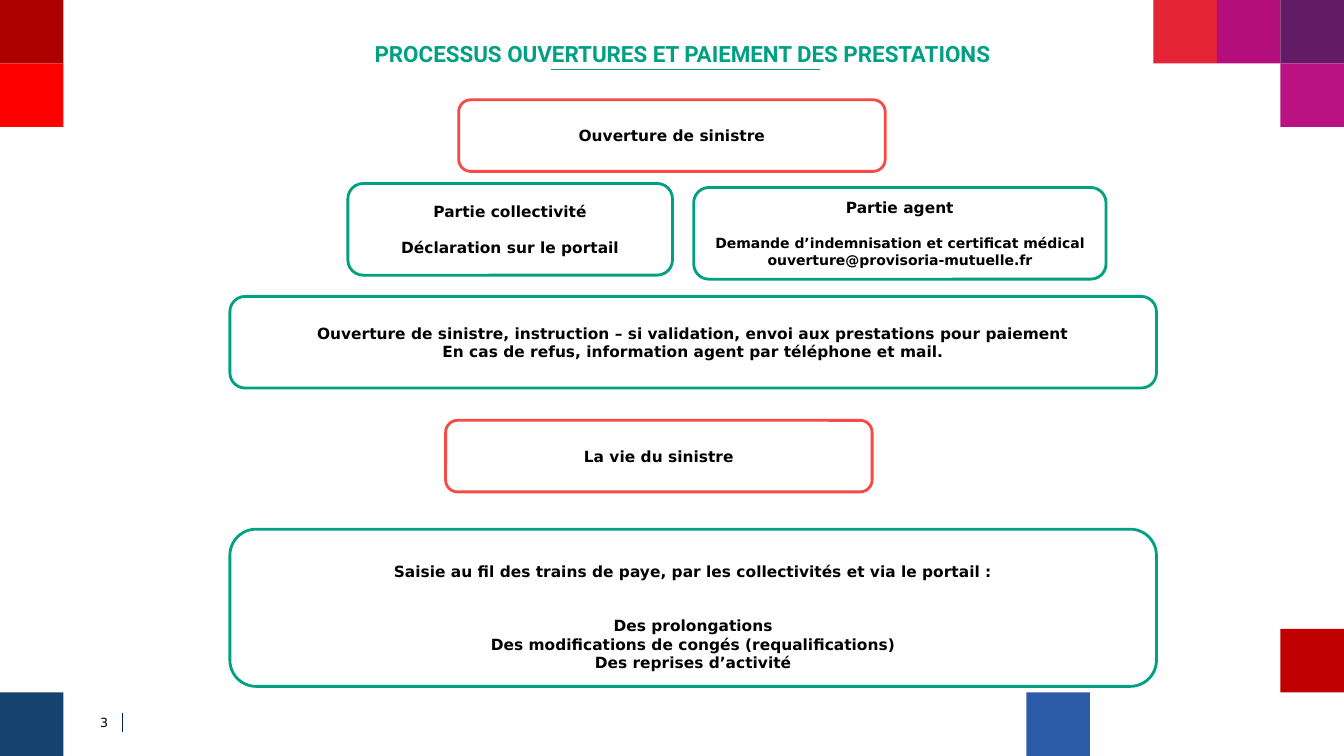
import pptx
import pptx.util
import pptx.dml.color
import pptx.enum.shapes
import pptx.enum.text
import pptx.oxml.ns
import lxml.etree

Inches, Pt = pptx.util.Inches, pptx.util.Pt
RGBColor = pptx.dml.color.RGBColor
MSO_SHAPE = pptx.enum.shapes.MSO_SHAPE
MSO_ANCHOR = pptx.enum.text.MSO_ANCHOR
PP_ALIGN = pptx.enum.text.PP_ALIGN

GREEN = RGBColor(0x00, 0xA0, 0x82)
RULE_GREEN = RGBColor(0x00, 0x9C, 0x7F)
CORAL = RGBColor(0xF5, 0x4B, 0x44)
NAVY = RGBColor(0x00, 0x20, 0x60)
BLACK = RGBColor(0x00, 0x00, 0x00)
WHITE = RGBColor(0xFF, 0xFF, 0xFF)
DARK_RED = RGBColor(0xAC, 0x00, 0x00)
RED = RGBColor(0xFF, 0x00, 0x00)
SCARLET = RGBColor(0xE4, 0x23, 0x34)
MAGENTA = RGBColor(0xB4, 0x0E, 0x7C)
PURPLE = RGBColor(0x62, 0x1C, 0x65)
PINK = RGBColor(0xBA, 0x11, 0x83)
BRICK = RGBColor(0xC0, 0x00, 0x00)
DEEP_BLUE = RGBColor(0x13, 0x43, 0x6E)
BLUE = RGBColor(0x2D, 0x5B, 0xA7)

WIDTH, HEIGHT, TILE = 13.33, 7.5, 0.63
RIGHT, BOTTOM = WIDTH - TILE, HEIGHT - TILE
BLANK = 13  # points, one empty line between paragraphs

TILES = [
    (0, 0, DARK_RED), (0, TILE, RED),
    (RIGHT - 2 * TILE, 0, SCARLET), (RIGHT - TILE, 0, MAGENTA),
    (RIGHT, 0, PURPLE), (RIGHT, TILE, PINK),
    (RIGHT, BOTTOM - TILE, BRICK),
    (0, BOTTOM, DEEP_BLUE), (RIGHT - 4 * TILE, BOTTOM, BLUE),
]

# box, outline, top inset, paragraphs as (text, size, space before)
STEPS = [
    ((4.55, 0.99, 4.23, 0.71), CORAL, 0.05, [("Ouverture de sinistre", 11, 0)]),
    ((3.45, 1.82, 3.22, 0.91), GREEN, 0.05, [
        ("Partie collectivité", 11, 0),
        ("Déclaration sur le portail", 11, BLANK)]),
    ((6.88, 1.86, 4.09, 0.91), GREEN, 0.05, [
        ("Partie agent", 11, 0),
        ("Demande d’indemnisation et certificat médical", 10, BLANK),
        ("ouverture@provisoria-mutuelle.fr", 10, 0)]),
    ((2.28, 2.94, 9.19, 0.91), GREEN, 0.05, [
        ("Ouverture de sinistre, instruction – si validation, "
         "envoi aux prestations pour paiement", 11, 0),
        ("En cas de refus, information agent par téléphone et mail.", 11, 0)]),
    ((4.42, 4.17, 4.23, 0.71), CORAL, 0.05, [("La vie du sinistre", 11, 0)]),
    ((2.28, 5.25, 9.19, 1.56), GREEN, 0.23, [
        ("Saisie au fil des trains de paye, par les collectivités "
         "et via le portail :", 11, 0),
        ("Des prolongations", 11, 2 * BLANK),
        ("Des modifications de congés (requalifications)", 11, 0),
        ("Des reprises d’activité", 11, 0)]),
]


def set_attrs(obj, values):
    for name, value in values.items():
        setattr(obj, name, value)


def place(sp, box):
    set_attrs(sp, dict(zip(("left", "top", "width", "height"), map(Inches, box))))


def set_font(font, size, color, bold=False, name="DejaVu Sans"):
    set_attrs(font, {"name": name, "size": Pt(size), "bold": bold})
    font.color.rgb = color


def add_shape(slide, kind, box, fill):
    sp = slide.shapes.add_shape(kind, *map(Inches, box))
    sp.shadow.inherit = False
    sp.fill.solid()
    sp.fill.fore_color.rgb = fill
    sp.line.fill.background()
    return sp


def add_rule(slide, ends, color):
    line = slide.shapes.add_connector(
        pptx.enum.shapes.MSO_CONNECTOR.STRAIGHT, *map(Inches, ends))
    line.line.color.rgb = color
    line.line.width = Pt(0.75)
    lxml.etree.SubElement(line._element.spPr, pptx.oxml.ns.qn("a:effectLst"))


def add_tiles(slide):
    for left, top, color in TILES:
        add_shape(slide, MSO_SHAPE.RECTANGLE, (left, top, TILE, TILE), color)


def add_page_number(slide, box):
    left, top, width, height = box
    sp = slide.shapes.add_textbox(*map(Inches, box))
    set_attrs(sp.text_frame, {"word_wrap": True, "text": "3"})
    p = sp.text_frame.paragraphs[0]
    p.alignment = PP_ALIGN.RIGHT
    set_font(p.font, 9, BLACK)
    x = left + width + 0.05
    add_rule(slide, (x, top + 0.03, x, top + 0.22), NAVY)


def add_title(slide, box):
    left, top, width, height = box
    title = slide.shapes.title
    place(title, box)
    tf = title.text_frame
    set_attrs(tf, {"text": "PROCESSUS OUVERTURES ET PAIEMENT DES PRESTATIONS",
                   "word_wrap": True, "vertical_anchor": MSO_ANCHOR.BOTTOM,
                   "auto_size": pptx.enum.text.MSO_AUTO_SIZE.NONE})
    p = tf.paragraphs[0]
    set_attrs(p, {"alignment": PP_ALIGN.CENTER, "line_spacing": 0.9})
    set_font(p.font, 16, GREEN, True, "Roboto")
    y = top + height - 0.03
    add_rule(slide, (left + 2.45, y, left + 5.11, y), RULE_GREEN)


def add_step(slide, box, outline, top_inset, paragraphs):
    sp = add_shape(slide, MSO_SHAPE.ROUNDED_RECTANGLE, box, WHITE)
    sp.line.color.rgb = outline
    sp.line.width = Pt(2)
    tf = sp.text_frame
    set_attrs(tf, {"word_wrap": True, "vertical_anchor": MSO_ANCHOR.MIDDLE,
                   "margin_top": Inches(top_inset)})
    for i, (text, size, before) in enumerate(paragraphs):
        p = tf.add_paragraph() if i else tf.paragraphs[0]
        set_attrs(p, {"text": text, "alignment": PP_ALIGN.CENTER,
                      "space_before": Pt(before)})
        set_font(p.font, size, BLACK, True)


def main():
    prs = pptx.Presentation()
    set_attrs(prs, {"slide_width": Inches(WIDTH), "slide_height": Inches(HEIGHT)})
    slide = prs.slides.add_slide(prs.slide_layouts[5])
    add_tiles(slide)
    add_page_number(slide, (0.64, 7.04, 0.53, 0.25))
    add_title(slide, (3.02, 0.38, 7.5, 0.34))
    for step in STEPS:
        add_step(slide, *step)
    prs.save("out.pptx")


if __name__ == "__main__":
    main()
